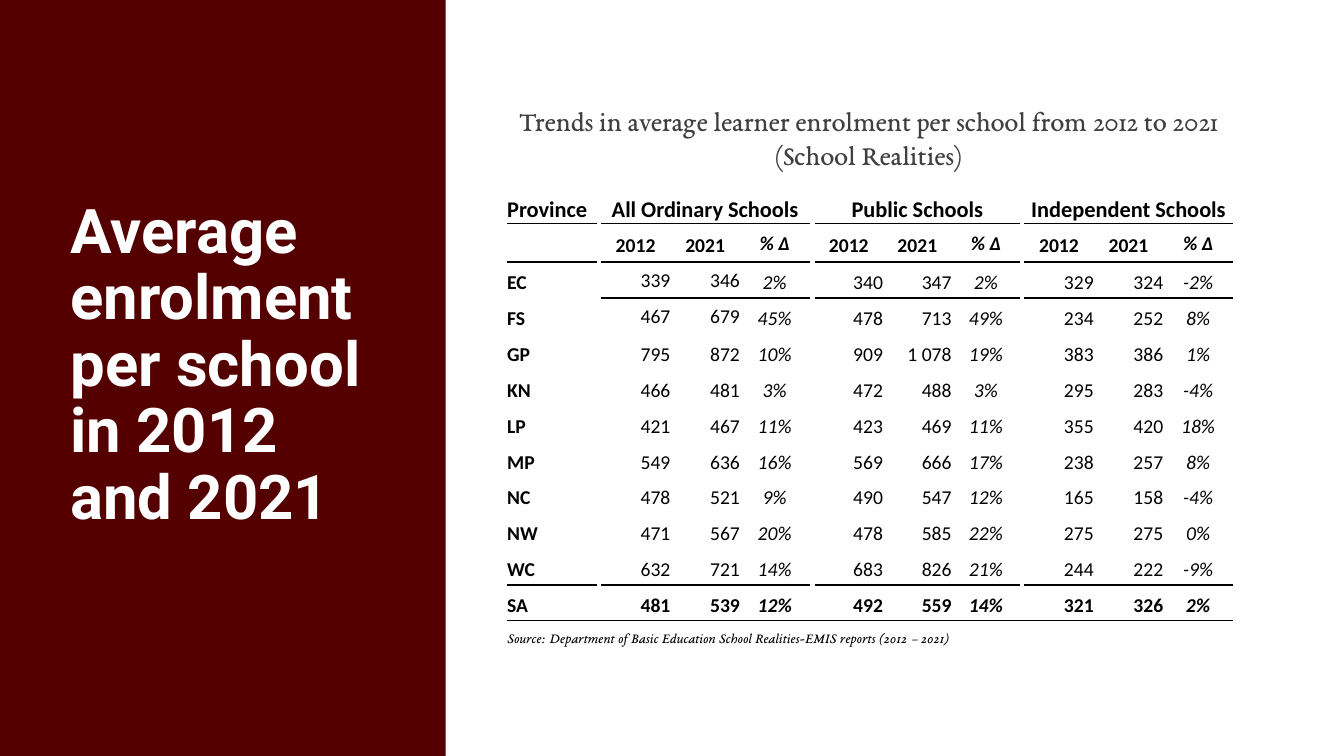
import lxml.etree
import pptx
import pptx.dml.color
import pptx.enum.shapes
import pptx.enum.text
import pptx.oxml.ns
import pptx.util
from dataclasses import dataclass

TITLE = "Average enrolment per school in 2012 and 2021"
CAPTION = "Trends in average learner enrolment per school from 2012 to 2021 (School Realities)"
SOURCE = "Source: Department of Basic Education School Realities-EMIS reports (2012 – 2021)"
GROUPS = ["All Ordinary Schools", "Public Schools", "Independent Schools"]
MEASURES = ["2012", "2021", "% Δ"]
PROVINCES = [
    ("EC", "339", "346", "2%", "340", "347", "2%", "329", "324", "-2%"),
    ("FS", "467", "679", "45%", "478", "713", "49%", "234", "252", "8%"),
    ("GP", "795", "872", "10%", "909", "1 078", "19%", "383", "386", "1%"),
    ("KN", "466", "481", "3%", "472", "488", "3%", "295", "283", "-4%"),
    ("LP", "421", "467", "11%", "423", "469", "11%", "355", "420", "18%"),
    ("MP", "549", "636", "16%", "569", "666", "17%", "238", "257", "8%"),
    ("NC", "478", "521", "9%", "490", "547", "12%", "165", "158", "-4%"),
    ("NW", "471", "567", "20%", "478", "585", "22%", "275", "275", "0%"),
    ("WC", "632", "721", "14%", "683", "826", "21%", "244", "222", "-9%"),
    ("SA", "481", "539", "12%", "492", "559", "14%", "321", "326", "2%"),
]


@dataclass
class Theme:
    maroon: str = "550000"
    white: str = "FFFFFF"
    black: str = "000000"
    grey: str = "404040"
    title_font: str = "Roboto"
    serif_font: str = "EB Garamond"
    table_font: str = "Calibri"
    title_size: int = 44
    caption_size: int = 20
    header_size: int = 16
    body_size: int = 14
    source_size: int = 10
    rule_width: int = 1


THEME = Theme()
Inches = pptx.util.Inches
ALIGN = pptx.enum.text.PP_ALIGN
ANCHOR = pptx.enum.text.MSO_ANCHOR

COLUMN_WIDTHS = [0.89, 0.04, 0.69, 0.69, 0.69, 0.05, 0.68, 0.68, 0.68, 0.04, 0.69, 0.69, 0.69]
GROUP_STARTS = [2, 6, 10]
GAP_COLUMNS = [start - 1 for start in GROUP_STARTS]
VALUE_COLUMNS = [start + offset for start in GROUP_STARTS for offset in range(3)]
CHANGE_COLUMNS = [start + 2 for start in GROUP_STARTS]
ALL_COLUMNS = range(len(COLUMN_WIDTHS))
FIRST_BODY_ROW = 2
TOTAL_ROW = FIRST_BODY_ROW + len(PROVINCES) - 1
SOURCE_ROW = TOTAL_ROW + 1
BODY_HEIGHT = 3.56
ROW_HEIGHTS = [0.34, 0.38] + [BODY_HEIGHT / len(PROVINCES)] * len(PROVINCES) + [0.26]
# Row above each horizontal rule -> columns the rule covers
RULES = {
    0: [0] + VALUE_COLUMNS,
    1: VALUE_COLUMNS,
    TOTAL_ROW - 1: [0] + VALUE_COLUMNS,
    TOTAL_ROW: ALL_COLUMNS,
}
NO_GRID_STYLE = "{2D5ABB26-0587-4C30-8999-92F81FD0307C}"


def write(text_frame, text, font, size, color, align, spacing=1.0, bold=False, italic=False):
    text_frame.text = text
    paragraph = text_frame.paragraphs[0]
    paragraph.alignment = align
    paragraph.line_spacing = spacing
    for run in paragraph.runs:
        run.font.name = font
        run.font.size = pptx.util.Pt(size)
        run.font.color.rgb = pptx.dml.color.RGBColor.from_string(color)
        run.font.bold = bold
        run.font.italic = italic


def add_text_box(slide, box, *text_style, **options):
    shape = slide.shapes.add_textbox(*map(Inches, box))
    shape.text_frame.word_wrap = True
    shape.text_frame.vertical_anchor = ANCHOR.MIDDLE
    write(shape.text_frame, *text_style, **options)


def add_border(cell, tag):
    line = lxml.etree.SubElement(cell._tc.get_or_add_tcPr(), pptx.oxml.ns.qn(tag))
    line.set("w", str(pptx.util.Pt(THEME.rule_width)))
    fill = lxml.etree.SubElement(line, pptx.oxml.ns.qn("a:solidFill"))
    lxml.etree.SubElement(fill, pptx.oxml.ns.qn("a:srgbClr")).set("val", THEME.black)


def write_cell(cell, text, align, size=THEME.body_size, font=THEME.table_font,
               spacing=1.25, anchor=ANCHOR.MIDDLE, **style):
    cell.vertical_anchor = anchor
    write(cell.text_frame, text, font, size, THEME.black, align, spacing, **style)


def add_empty_table(slide):
    frame = slide.shapes.add_table(
        len(ROW_HEIGHTS), len(COLUMN_WIDTHS), Inches(5.03), Inches(1.88),
        Inches(sum(COLUMN_WIDTHS)), Inches(sum(ROW_HEIGHTS)))
    table = frame.table
    table.first_row = table.horz_banding = False
    table._tbl.tblPr.find(pptx.oxml.ns.qn("a:tableStyleId")).text = NO_GRID_STYLE
    for column, width in zip(table.columns, COLUMN_WIDTHS):
        column.width = Inches(width)
    for row, height in zip(table.rows, ROW_HEIGHTS):
        row.height = Inches(height)
    for row in range(len(ROW_HEIGHTS)):
        for column in ALL_COLUMNS:
            cell = table.cell(row, column)
            cell.margin_left = cell.margin_right = cell.margin_top = cell.margin_bottom = 0
            if column in RULES.get(row - 1, []):
                add_border(cell, "a:lnT")
            if column in RULES.get(row, []):
                add_border(cell, "a:lnB")
            cell.fill.background()
    return table


def fill_table(table):
    header = dict(size=THEME.header_size, anchor=ANCHOR.BOTTOM, bold=True)
    write_cell(table.cell(0, 0), "Province", ALIGN.JUSTIFY, **header)
    for start, group in zip(GROUP_STARTS, GROUPS):
        table.cell(0, start).merge(table.cell(0, start + 2))
        write_cell(table.cell(0, start), group, ALIGN.CENTER, **header)
        for column, measure in enumerate(MEASURES, start):
            change = column in CHANGE_COLUMNS
            write_cell(table.cell(1, column), measure, ALIGN.CENTER, bold=True,
                       italic=change, spacing=1.07 if change else 1.25)

    for row, (province, *values) in enumerate(PROVINCES, FIRST_BODY_ROW):
        write_cell(table.cell(row, 0), province, ALIGN.JUSTIFY, bold=True)
        for column, value in zip(VALUE_COLUMNS, values):
            change = column in CHANGE_COLUMNS
            tight = row < FIRST_BODY_ROW + 2 and column in (2, 3)
            write_cell(table.cell(row, column), value,
                       ALIGN.CENTER if change else ALIGN.RIGHT, bold=row == TOTAL_ROW,
                       italic=change, spacing=1.07 if tight else 1.25)

    source = table.cell(SOURCE_ROW, 0)
    source.merge(table.cell(SOURCE_ROW, ALL_COLUMNS[-1]))
    write_cell(source, SOURCE, ALIGN.JUSTIFY, THEME.source_size, THEME.serif_font,
               spacing=1.07, anchor=ANCHOR.BOTTOM, italic=True)


def main():
    presentation = pptx.Presentation()
    presentation.slide_width = Inches(13.33)
    presentation.slide_height = Inches(7.5)
    slide = presentation.slides.add_slide(presentation.slide_layouts[6])

    panel = slide.shapes.add_shape(
        pptx.enum.shapes.MSO_SHAPE.RECTANGLE, 0, 0, Inches(4.42), Inches(7.5))
    panel.shadow.inherit = False
    panel.fill.solid()
    panel.fill.fore_color.rgb = pptx.dml.color.RGBColor.from_string(THEME.maroon)
    panel.line.fill.background()

    add_text_box(slide, (0.6, 0.87, 3.32, 5.53), TITLE, THEME.title_font,
                 THEME.title_size, THEME.white, ALIGN.LEFT, spacing=0.9, bold=True)
    fill_table(add_empty_table(slide))
    add_text_box(slide, (5.03, 0.98, 7.17, 0.77), CAPTION, THEME.serif_font,
                 THEME.caption_size, THEME.grey, ALIGN.CENTER)
    presentation.save("out.pptx")


if __name__ == "__main__":
    main()
